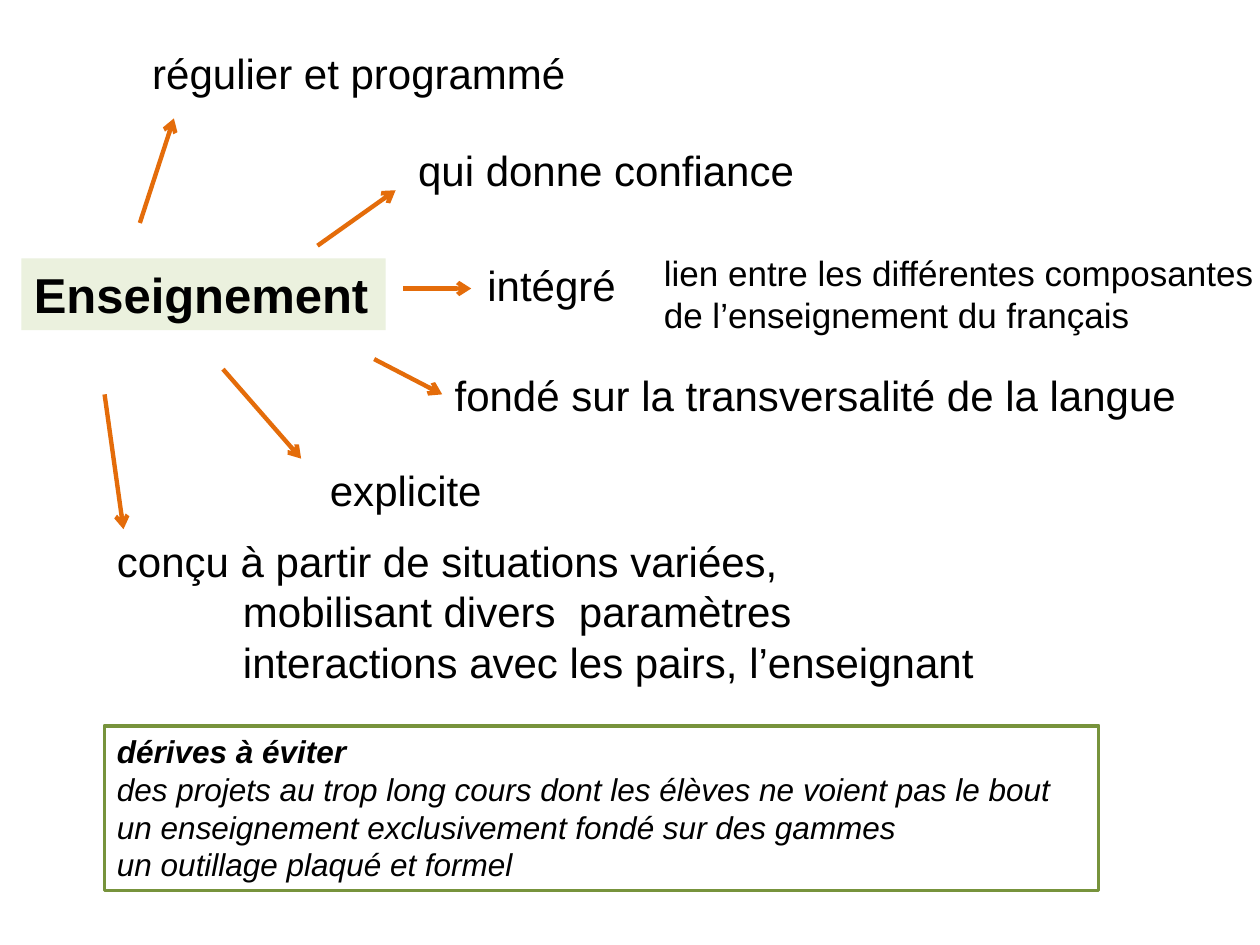
from lxml import etree
from pptx import Presentation
from pptx.dml.color import RGBColor
from pptx.enum.shapes import MSO_CONNECTOR, MSO_SHAPE
from pptx.enum.text import MSO_ANCHOR, MSO_AUTO_SIZE, PP_ALIGN
from pptx.oxml.ns import qn
from pptx.util import Inches, Pt

COLORS = {"text": "000000", "arrow": "E46C0A", "border": "77933C", "fill": "EBF1DE"}


def rgb(name):
    return RGBColor.from_string(COLORS[name])


class Deck:
    font = "Arial"

    def __init__(self, prs):
        self.s = prs.slides.add_slide(prs.slide_layouts[6])

    def fill_text(self, sp, lines, size, wrap=False, bold=False, italic=False):
        tf = sp.text_frame
        tf.word_wrap = wrap
        tf.auto_size = MSO_AUTO_SIZE.SHAPE_TO_FIT_TEXT
        tf.vertical_anchor = MSO_ANCHOR.TOP
        tf.text = "\n".join(lines)
        for p in tf.paragraphs:
            p.alignment = PP_ALIGN.LEFT
            p.font.name = self.font
            p.font.size = Pt(size)
            p.font.bold = bold
            p.font.italic = italic
            p.font.color.rgb = rgb("text")
        return tf.paragraphs

    def text(self, box, lines, size=24, wrap=False):
        sp = self.s.shapes.add_textbox(*map(Inches, box))
        return self.fill_text(sp, lines, size, wrap)

    def panel(self, box, lines, size, fill=None, border=None, **style):
        sp = self.s.shapes.add_shape(MSO_SHAPE.RECTANGLE, *map(Inches, box))
        sp.shadow.inherit = False
        if fill:
            sp.fill.solid()
            sp.fill.fore_color.rgb = rgb(fill)
        else:
            sp.fill.background()
        if border:
            sp.line.color.rgb = rgb(border)
            sp.line.width = Pt(2)
        else:
            sp.line.fill.background()
        return self.fill_text(sp, lines, size, **style)

    def arrow(self, start, end):
        c = self.s.shapes.add_connector(MSO_CONNECTOR.STRAIGHT, *map(Inches, start + end))
        c.line.color.rgb = rgb("arrow")
        c.line.width = Pt(2.5)
        sp_pr = c._element.spPr
        etree.SubElement(sp_pr.find(qn("a:ln")), qn("a:tailEnd"), type="arrow")
        etree.SubElement(sp_pr, qn("a:effectLst"))


def main():
    prs = Presentation()
    prs.slide_width, prs.slide_height = Inches(10), Inches(7.5)
    deck = Deck(prs)

    pitfalls = deck.panel((0.83, 5.76, 7.89, 1.31), [
        "dérives à éviter",
        "des projets au trop long cours dont les élèves ne voient pas le bout",
        "un enseignement exclusivement fondé sur des gammes",
        "un outillage plaqué et formel",
    ], 18, border="border", wrap=True, italic=True)
    pitfalls[0].font.bold = True

    deck.panel((0.17, 2.05, 2.89, 0.57), ["Enseignement"], 28, fill="fill", bold=True)

    for left, top, width, label in [
        (1.11, 0.33, 3.52, "régulier et programmé"),
        (3.22, 1.1, 3.22, "qui donne confiance"),
        (3.77, 2.01, 1.23, "intégré"),
        (3.51, 2.88, 5.99, "fondé sur la transversalité de la langue"),
        (2.52, 3.64, 1.42, "explicite"),
    ]:
        deck.text((left, top, width, 0.5), [label])

    deck.text((5.17, 1.95, 4.99, 0.77), [
        "lien entre les différentes composantes",
        "de l’enseignement du français",
    ], size=20)

    situations = deck.text((0.83, 4.2, 7.14, 1.31), [
        "conçu à partir de situations variées,",
        "mobilisant divers  paramètres",
        "interactions avec les pairs, l’enseignant",
    ], wrap=True)
    for p in situations[1:]:
        p._p.get_or_add_pPr().set("marL", str(Inches(1)))

    for start, end in [
        ((1.11, 1.77), (1.38, 0.94)),
        ((2.52, 1.95), (3.14, 1.51)),
        ((3.2, 2.29), (3.74, 2.29)),
        ((2.97, 2.85), (3.51, 3.13)),
        ((1.77, 2.93), (2.39, 3.64)),
        ((0.83, 3.13), (0.98, 4.2)),
    ]:
        deck.arrow(start, end)

    prs.save("out.pptx")


if __name__ == "__main__":
    main()
